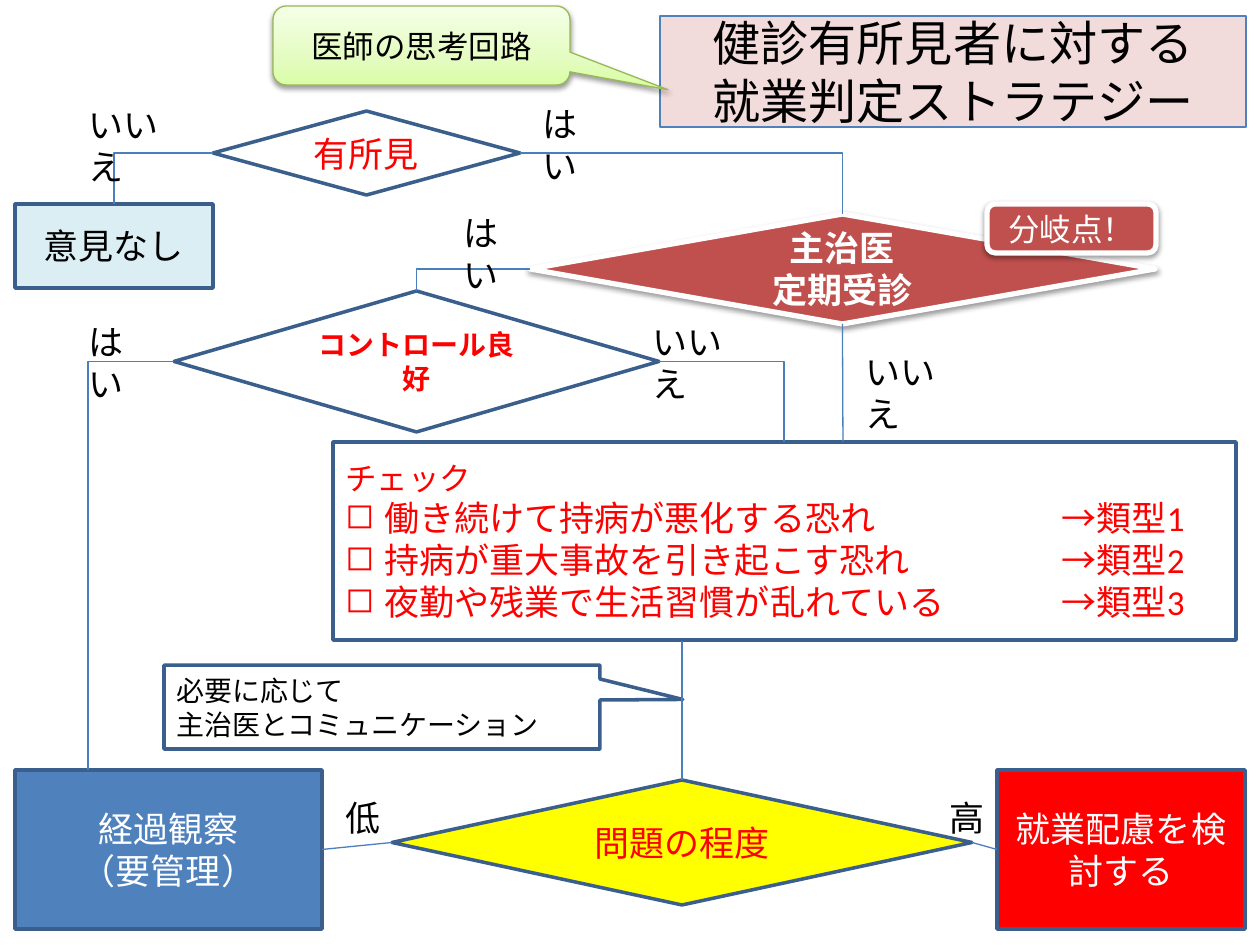
from lxml.etree import SubElement
from pptx import Presentation
from pptx.dml.color import RGBColor
from pptx.enum.shapes import MSO_CONNECTOR, MSO_SHAPE
from pptx.enum.text import MSO_ANCHOR, MSO_AUTO_SIZE, PP_ALIGN
from pptx.oxml import parse_xml
from pptx.oxml.ns import nsdecls, qn
from pptx.util import Pt

PX = 914400 / 126
SLIDE = (1260, 945)
THEME = {
    "font": "Calibri",
    "black": "000000", "white": "FFFFFF", "red": "FF0000", "yellow": "FFFF00",
    "brick": "C0504D", "blue": "4F81BD", "pale blue": "DBEEF4", "pink": "F2DCDB",
    "outline": "3A5F8C", "wire": "4B7EBC", "green edge": "98B955",
    "gradient": [(0, "DAFDA7"), (35, "E4FCC2"), (100, "F5FFE7")],
    "title": 27.5, "body": 20, "note": 18, "small": 16,
    "thin": 0.75, "medium": 2, "thick": 3,
}
DECISION = MSO_SHAPE.FLOWCHART_DECISION
PROCESS = MSO_SHAPE.FLOWCHART_PROCESS

# Steps: key, shape, (left, top, width, height), lines, format that differs from BASE
BASE = {"fill": None, "edge": "outline", "weight": "medium", "color": "black",
        "size": "body", "bold": None, "align": PP_ALIGN.CENTER, "shadow": False, "adjust": ()}
RAISED = {"fill": "brick", "edge": "white", "weight": "thick", "color": "white", "shadow": True}
STEPS = [
    ("finding", DECISION, (213, 111, 307, 84), ["有所見"], {"color": "red"}),
    ("no opinion", PROCESS, (15, 204, 198, 84), ["意見なし"], {"fill": "pale blue"}),
    ("doctor visits", DECISION, (530, 214, 625, 110), ["主治医", "定期受診"],
     {**RAISED, "bold": True}),
    ("control", DECISION, (174, 291, 485, 141), ["コントロール良好"],
     {"color": "red", "size": "small", "bold": True}),
    ("check", PROCESS, (333, 442, 903, 198), ["チェック"],
     {"color": "red", "size": "note", "align": PP_ALIGN.LEFT}),
    ("severity", DECISION, (392, 780, 580, 125), ["問題の程度"],
     {"fill": "yellow", "color": "red"}),
    ("follow-up", PROCESS, (15, 770, 307, 159), ["経過観察", "（要管理）"],
     {"fill": "blue", "color": "white"}),
    ("work care", PROCESS, (997, 770, 248, 159), ["就業配慮を検討する"],
     {"fill": "red", "color": "white"}),
    ("title", MSO_SHAPE.RECTANGLE, (660, 16, 586, 111),
     ["健診有所見者に対する", "就業判定ストラテジー"],
     {"fill": "pink", "edge": "blue", "weight": "thin", "size": "title"}),
    ("contact", MSO_SHAPE.RECTANGULAR_CALLOUT, (164, 665, 436, 84),
     ["必要に応じて", "主治医とコミュニケーション"],
     {"size": "small", "align": PP_ALIGN.LEFT, "adjust": (0.69, -0.09)}),
    ("thinking", MSO_SHAPE.ROUNDED_RECTANGULAR_CALLOUT, (273, 6, 297, 79), ["医師の思考回路"],
     {"fill": "gradient", "edge": "green edge", "weight": "thin", "size": "note",
      "shadow": True, "adjust": (0.83, 0.56, 0.17)}),
    ("branch point", MSO_SHAPE.FLOWCHART_ALTERNATE_PROCESS, (987, 204, 169, 49), ["分岐点！"],
     {**RAISED, "size": "note"}),
]
CHECKS = [
    ("働き続けて持病が悪化する恐れ", "→類型1"),
    ("持病が重大事故を引き起こす恐れ", "→類型2"),
    ("夜勤や残業で生活習慣が乱れている", "→類型3"),
]
CHECK_INDENT, CHECK_TAB = 39, 864

# Links: ends are (step, side) where joined, or a plain (x, y)
TOP, LEFT, BOTTOM, RIGHT = range(4)
BENT_LINKS = [
    (("finding", LEFT), ("no opinion", TOP)),
    (("finding", RIGHT), ("doctor visits", TOP)),
    (("doctor visits", LEFT), ("control", TOP)),
    (("control", LEFT), (88, 770)),
    (("control", RIGHT), (784, 442)),
]
STRAIGHT_LINKS = [
    (("doctor visits", BOTTOM), (843, 442)),
    ((682, 641), ("severity", TOP)),
    (("follow-up", RIGHT), ("severity", LEFT)),
    (("severity", RIGHT), ("work care", LEFT)),
]

# Branch answers: text, left, top; width follows the number of letters
ANSWERS = [
    ("いいえ", 76, 97), ("はい", 530, 96), ("はい", 451, 205), ("いいえ", 640, 314),
    ("いいえ", 853, 344), ("はい", 76, 314), ("低", 333, 790), ("高", 937, 790),
]
ANSWER_WIDTHS, ANSWER_HEIGHT = {1: 60, 2: 94, 3: 123}, 55


def emu(*lengths):
    return [round(length * PX) for length in lengths]


def rgb(name):
    return RGBColor.from_string(THEME[name])


def apply(target, values):
    for name, value in values.items():
        setattr(target, name, value)


def write(frame, lines, style):
    apply(frame, {"word_wrap": True, "auto_size": MSO_AUTO_SIZE.NONE})
    for number, line in enumerate(lines):
        paragraph = frame.paragraphs[0] if number == 0 else frame.add_paragraph()
        add_line(paragraph, line, style)


def add_line(paragraph, line, style):
    paragraph.alignment = style["align"]
    run = paragraph.add_run()
    run.text = line
    apply(run.font, {"name": THEME["font"], "size": Pt(THEME[style["size"]]),
                     "bold": style["bold"]})
    run.font.color.rgb = rgb(style["color"])


def paint(shape, style):
    if style["fill"] == "gradient":
        stops = "".join(f'<a:gs pos="{at * 1000}"><a:srgbClr val="{color}"/></a:gs>'
                        for at, color in THEME["gradient"])
        shape._element.spPr.find(qn("a:prstGeom")).addnext(parse_xml(
            f'<a:gradFill {nsdecls("a")} rotWithShape="1"><a:gsLst>{stops}</a:gsLst>'
            '<a:lin ang="16200000" scaled="0"/></a:gradFill>'))
    elif style["fill"]:
        shape.fill.solid()
        shape.fill.fore_color.rgb = rgb(style["fill"])
    else:
        shape.fill.background()
    shape.line.color.rgb = rgb(style["edge"])
    shape.line.width = Pt(THEME[style["weight"]])
    shape.shadow.inherit = False
    if style["shadow"]:
        shape._element.spPr.find(qn("a:effectLst")).append(parse_xml(
            f'<a:outerShdw {nsdecls("a")} blurRad="{Pt(3.1)}" dist="{Pt(1.6)}" dir="5400000" '
            'rotWithShape="0"><a:srgbClr val="000000"><a:alpha val="38000"/></a:srgbClr>'
            '</a:outerShdw>'))


def add_link(shapes, kind, start, end, steps):
    link = shapes.add_connector(kind, *emu(*[0 if isinstance(v, str) else v
                                             for v in (*start, *end)]))
    for (place, side), join in ((start, link.begin_connect), (end, link.end_connect)):
        if place in steps:
            join(steps[place], side)
    link.line.color.rgb = rgb("wire")
    link.line.width = Pt(THEME["thin"])
    SubElement(link._element.spPr, qn("a:effectLst"))
    return link


def main():
    deck = Presentation()
    deck.slide_width, deck.slide_height = emu(*SLIDE)
    shapes = deck.slides.add_slide(deck.slide_layouts[6]).shapes

    # Steps, title and callouts
    steps = {}
    for key, kind, box, lines, changes in STEPS:
        style = {**BASE, **changes}
        step = steps[key] = shapes.add_shape(kind, *emu(*box))
        for number, value in enumerate(style["adjust"]):
            step.adjustments[number] = value
        paint(step, style)
        step.text_frame.vertical_anchor = MSO_ANCHOR.MIDDLE
        write(step.text_frame, lines, style)

    # Check list with hanging boxes and right-aligned types
    indent, tab = emu(CHECK_INDENT, CHECK_TAB)
    for risk, category in CHECKS:
        paragraph = steps["check"].text_frame.add_paragraph()
        add_line(paragraph, f"{risk}\t{category}",
                 {**BASE, "color": "red", "align": PP_ALIGN.LEFT})
        layout = paragraph._p.get_or_add_pPr()
        layout.set("marL", str(indent))
        layout.set("indent", str(-indent))
        SubElement(layout, qn("a:buChar"), char="◻")
        SubElement(SubElement(layout, qn("a:tabLst")), qn("a:tab"), pos=str(tab), algn="r")

    # Links: bent ones leave sideways and turn once
    for start, end in BENT_LINKS:
        link = add_link(shapes, MSO_CONNECTOR.ELBOW, start, end, steps)
        link._element.spPr.find(qn("a:prstGeom")).set("prst", "bentConnector2")
    for start, end in STRAIGHT_LINKS:
        add_link(shapes, MSO_CONNECTOR.STRAIGHT, start, end, steps)

    # Branch answers
    for answer, left, top in ANSWERS:
        label = shapes.add_textbox(*emu(left, top, ANSWER_WIDTHS[len(answer)], ANSWER_HEIGHT))
        write(label.text_frame, [answer], {**BASE, "align": PP_ALIGN.LEFT})

    deck.save("out.pptx")


if __name__ == "__main__":
    main()
